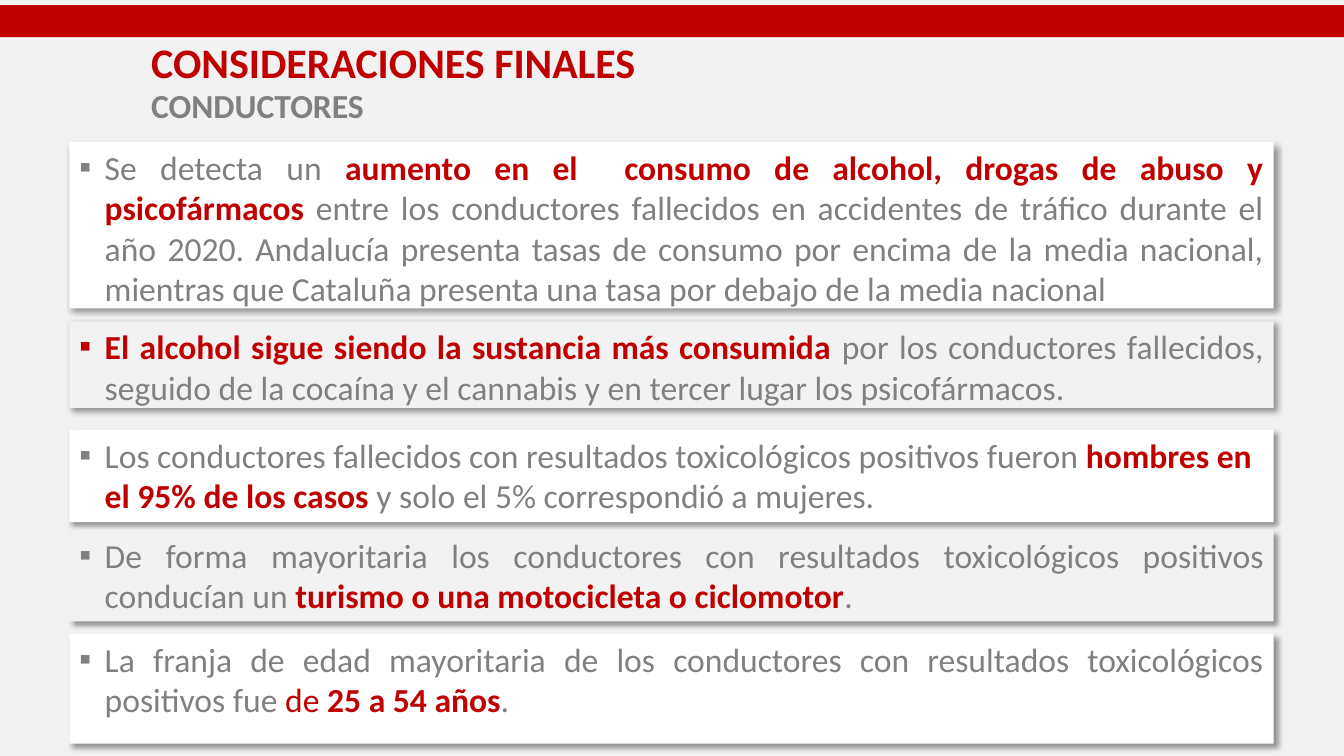
import dataclasses

import lxml.etree
import pptx
import pptx.dml.color
import pptx.enum.shapes
import pptx.enum.text
import pptx.oxml
import pptx.oxml.ns
import pptx.util

Cm = pptx.util.Cm
Align = pptx.enum.text.PP_ALIGN


@dataclasses.dataclass(frozen=True)
class Theme:
    font: str = "Calibri"
    red: str = "C00000"
    grey: str = "808080"
    pale: str = "F2F2F2"
    white: str = "FFFFFF"
    shadow: str = "000000"
    title_size: int = 30
    body_size: int = 24


class ConclusionsSlide:
    def __init__(self, presentation, theme):
        self.theme = theme
        self.slide = presentation.slides.add_slide(presentation.slide_layouts[6])
        self.paint(self.slide.background.fill, theme.pale)

    def paint(self, fill, color):
        fill.solid()
        fill.fore_color.rgb = pptx.dml.color.RGBColor.from_string(color)

    def style(self, run, color, size, bold):
        run.font.name = self.theme.font
        run.font.size = pptx.util.Pt(size)
        run.font.bold = bold
        run.font.color.rgb = pptx.dml.color.RGBColor.from_string(color)

    def rectangle(self, left, top, width, height, color):
        shape = self.slide.shapes.add_shape(
            pptx.enum.shapes.MSO_SHAPE.RECTANGLE,
            Cm(left), Cm(top), Cm(width), Cm(height))
        shape.shadow.inherit = False
        self.paint(shape.fill, color)
        shape.line.fill.background()
        return shape

    def heading(self, left, top, width, height, title, subtitle):
        box = self.slide.shapes.add_textbox(Cm(left), Cm(top), Cm(width), Cm(height))
        frame = box.text_frame
        frame.word_wrap = True
        frame.vertical_anchor = pptx.enum.text.MSO_ANCHOR.MIDDLE
        paragraph = frame.paragraphs[0]
        paragraph.text = f"{title}\v{subtitle}"
        paragraph.line_spacing = 0.95
        title_run, subtitle_run = paragraph.runs
        self.style(title_run, self.theme.red, self.theme.title_size, True)
        self.style(subtitle_run, self.theme.grey, self.theme.body_size, True)

    def drop_shadow(self, shape):
        effects = shape._element.spPr.find(pptx.oxml.ns.qn("a:effectLst"))
        effects.append(pptx.oxml.parse_xml(
            f'<a:outerShdw {pptx.oxml.ns.nsdecls("a")} blurRad="50800" dist="38100" '
            'dir="2700000" algn="tl" rotWithShape="0">'
            f'<a:srgbClr val="{self.theme.shadow}"><a:alpha val="40000"/></a:srgbClr>'
            '</a:outerShdw>'))

    def bullet(self, paragraph):
        properties = paragraph._p.get_or_add_pPr()
        indent = Cm(0.64)
        properties.set("marL", str(indent))
        properties.set("indent", str(-indent))
        typeface = lxml.etree.SubElement(properties, pptx.oxml.ns.qn("a:buFont"))
        typeface.set("typeface", self.theme.font)
        mark = lxml.etree.SubElement(properties, pptx.oxml.ns.qn("a:buChar"))
        mark.set("char", "▪")

    def conclusion(self, top, height, color, align, passages):
        """Add a shadowed card; passages are (text, colour, bold) triples."""
        card = self.rectangle(1.75, top, 30.35, height, color)
        self.drop_shadow(card)
        frame = card.text_frame
        frame.word_wrap = True
        frame.vertical_anchor = pptx.enum.text.MSO_ANCHOR.TOP
        paragraph = frame.paragraphs[0]
        self.bullet(paragraph)
        paragraph.alignment = align
        for text, text_color, bold in passages:
            run = paragraph.add_run()
            run.text = text
            self.style(run, text_color, self.theme.body_size, bold)


def main():
    theme = Theme()
    presentation = pptx.Presentation()
    presentation.slide_width = Cm(33.87)
    presentation.slide_height = Cm(19.05)
    slide = ConclusionsSlide(presentation, theme)

    def plain(text):
        return text, theme.grey, False

    def strong(text):
        return text, theme.red, True

    slide.heading(3.56, 0.83, 26.75, 2.54, "CONSIDERACIONES FINALES", "CONDUCTORES")

    conclusions = [
        (3.58, 4.19, Align.JUSTIFY, [
            plain("Se detecta un "),
            strong("aumento en el  consumo de alcohol, drogas de abuso y psicofármacos "),
            plain("entre los conductores fallecidos en accidentes de tráfico durante el "
                  "año 2020. Andalucía presenta tasas de consumo por encima de la media "
                  "nacional, mientras que Cataluña presenta una tasa por debajo de la "
                  "media nacional")]),
        (8.1, 2.18, Align.JUSTIFY, [
            strong("El alcohol sigue siendo la sustancia más consumida "),
            plain("por los conductores fallecidos, seguido de la cocaína y el cannabis "
                  "y en tercer lugar los psicofármacos.")]),
        (10.83, 2.33, Align.LEFT, [
            plain("Los conductores fallecidos con resultados toxicológicos positivos fueron "),
            strong("hombres en el 95% de los casos "),
            plain("y solo el 5% correspondió a mujeres.")]),
        (13.35, 2.31, Align.JUSTIFY, [
            plain("De forma mayoritaria los conductores con resultados toxicológicos "
                  "positivos conducían un "),
            strong("turismo o una motocicleta o ciclomotor"),
            plain(".")]),
        (15.97, 2.77, Align.JUSTIFY, [
            plain("La franja de edad mayoritaria de los conductores con resultados "
                  "toxicológicos positivos fue "),
            ("de ", theme.red, False),
            strong("25 a 54 años"),
            plain(".")]),
    ]
    for index, (top, height, align, passages) in enumerate(conclusions):
        color = theme.pale if index % 2 else theme.white
        slide.conclusion(top, height, color, align, passages)

    slide.rectangle(0, 0.13, 33.87, 0.81, theme.red)
    presentation.save("out.pptx")


if __name__ == "__main__":
    main()
